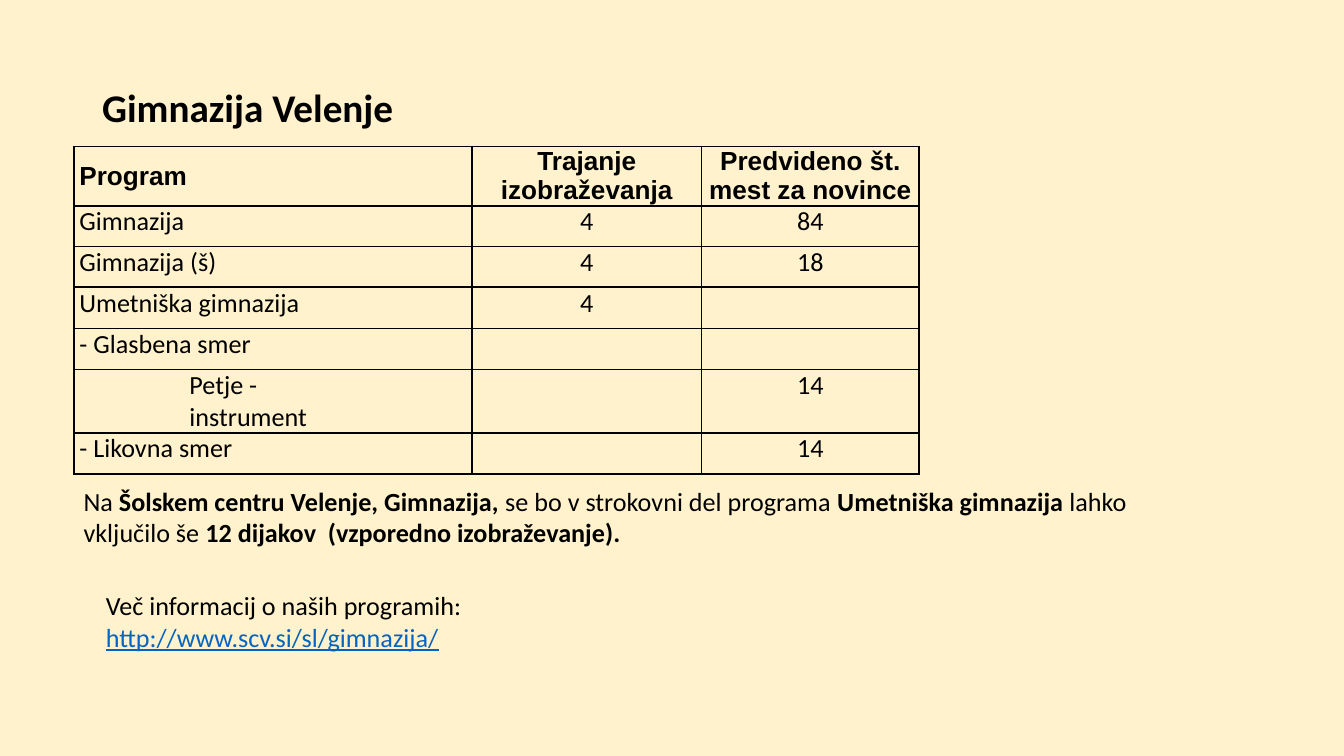
"""Build the slide with the programme table of Gimnazija Velenje."""
from dataclasses import dataclass

from lxml.etree import SubElement
from pptx import Presentation
from pptx.dml.color import RGBColor
from pptx.enum.text import MSO_ANCHOR, PP_ALIGN
from pptx.oxml.ns import qn
from pptx.util import Cm, Pt

BLACK = "000000"
CREAM = "FFF2CC"
LINK_BLUE = "0563C1"
COLUMN_WIDTHS = (7.52, 4.34, 4.11)
HEADER_HEIGHT = 1.12
ROW_HEIGHT = 0.77


@dataclass(frozen=True)
class TextRun:
    text: str
    bold: bool = False
    color: str = BLACK
    underline: bool = False
    size: float = 14
    font: str = "Calibri"


@dataclass(frozen=True)
class TextBlock:
    left: float
    top: float
    width: float
    height: float
    margins: tuple[float, float]
    paragraphs: tuple[tuple[TextRun, ...], ...]


@dataclass(frozen=True)
class ProgramRow:
    program: str
    duration: str = ""
    places: str = ""
    indent: float = 0


PROGRAMS = (
    ProgramRow("Program", "Trajanje izobraževanja", "Predvideno št. mest za novince"),
    ProgramRow("Gimnazija", "4", "84"),
    ProgramRow("Gimnazija (š)", "4", "18"),
    ProgramRow("Umetniška gimnazija", "4"),
    ProgramRow("- Glasbena smer"),
    ProgramRow("Petje - instrument", places="14", indent=2.08),
    ProgramRow("- Likovna smer", places="14"),
)

TITLE = TextBlock(1.75, 0.69, 21.89, 2.76, (0.18, 0.1), (
    (TextRun("Gimnazija Velenje", bold=True, size=21),),
))

NOTES = (
    TextBlock(1.4, 9.07, 21.49, 1.35, (0.18, 0.1), ((
        TextRun("Na "),
        TextRun("Šolskem centru Velenje, Gimnazija,", bold=True),
        TextRun(" se bo v strokovni del programa "),
        TextRun("Umetniška gimnazija", bold=True),
        TextRun(" lahko vključilo še "),
        TextRun("12 dijakov  (vzporedno izobraževanje).", bold=True),
    ),)),
    TextBlock(1.75, 10.9, 13.69, 0.84, (0.25, 0.25), (
        (TextRun("Več informacij o naših programih:"),),
        (TextRun("http://www.scv.si/sl/gimnazija/", color=LINK_BLUE, underline=True),),
    )),
)


def rgb(value: str) -> RGBColor:
    return RGBColor.from_string(value)


def add_run(paragraph, text_run: TextRun) -> None:
    run = paragraph.add_run()
    run.text = text_run.text
    run.font.name = text_run.font
    run.font.size = Pt(text_run.size)
    run.font.bold = text_run.bold
    run.font.underline = text_run.underline
    run.font.color.rgb = rgb(text_run.color)


def fill_block(shape, block: TextBlock) -> None:
    shape.left, shape.top = Cm(block.left), Cm(block.top)
    shape.width, shape.height = Cm(block.width), Cm(block.height)
    frame = shape.text_frame
    frame.word_wrap = True
    horizontal, vertical = block.margins
    frame.margin_left = frame.margin_right = Cm(horizontal)
    frame.margin_top = frame.margin_bottom = Cm(vertical)
    for index, text_runs in enumerate(block.paragraphs):
        paragraph = frame.add_paragraph() if index else frame.paragraphs[0]
        paragraph.alignment = PP_ALIGN.LEFT
        for text_run in text_runs:
            add_run(paragraph, text_run)


def add_title(slide) -> None:
    title = slide.shapes.title
    fill_block(title, TITLE)
    title.text_frame.vertical_anchor = MSO_ANCHOR.MIDDLE
    title.text_frame.paragraphs[0].line_spacing = 0.9


def add_note(slide, block: TextBlock) -> None:
    fill_block(slide.shapes.add_textbox(0, 0, 0, 0), block)


def frame_cell(cell) -> None:
    properties = cell._tc.get_or_add_tcPr()
    for side in ("a:lnL", "a:lnR", "a:lnT", "a:lnB"):
        line = SubElement(properties, qn(side), w=str(Pt(1)))
        SubElement(SubElement(line, qn("a:solidFill")), qn("a:srgbClr"), val=BLACK)
    cell.fill.background()


def fill_cell(cell, text: str, is_header: bool, is_centered: bool, indent: float) -> None:
    cell.margin_left = cell.margin_right = Cm(0.1 + indent)
    cell.margin_top = cell.margin_bottom = 0
    cell.vertical_anchor = MSO_ANCHOR.MIDDLE if is_header else MSO_ANCHOR.TOP
    frame_cell(cell)
    if text:
        paragraph = cell.text_frame.paragraphs[0]
        paragraph.alignment = PP_ALIGN.CENTER if is_centered else PP_ALIGN.LEFT
        font = "Arial" if is_header else "Calibri"
        add_run(paragraph, TextRun(text, bold=is_header, font=font))


def add_program_table(slide) -> None:
    height = HEADER_HEIGHT + ROW_HEIGHT * (len(PROGRAMS) - 1)
    table = slide.shapes.add_table(
        len(PROGRAMS), len(COLUMN_WIDTHS),
        Cm(1.4), Cm(2.77), Cm(sum(COLUMN_WIDTHS)), Cm(height),
    ).table
    table.first_row = table.horz_banding = False
    for column, width in zip(table.columns, COLUMN_WIDTHS):
        column.width = Cm(width)
    for row_index, program in enumerate(PROGRAMS):
        is_header = row_index == 0
        table.rows[row_index].height = Cm(HEADER_HEIGHT if is_header else ROW_HEIGHT)
        texts = (program.program, program.duration, program.places)
        for column_index, text in enumerate(texts):
            indent = 0 if column_index else program.indent
            cell = table.cell(row_index, column_index)
            fill_cell(cell, text, is_header, column_index > 0, indent)


def main() -> None:
    presentation = Presentation()
    presentation.slide_width, presentation.slide_height = Cm(25.4), Cm(14.29)
    slide = presentation.slides.add_slide(presentation.slide_layouts[5])
    slide.background.fill.solid()
    slide.background.fill.fore_color.rgb = rgb(CREAM)
    add_title(slide)
    add_program_table(slide)
    for block in NOTES:
        add_note(slide, block)
    presentation.save("out.pptx")


if __name__ == "__main__":
    main()
